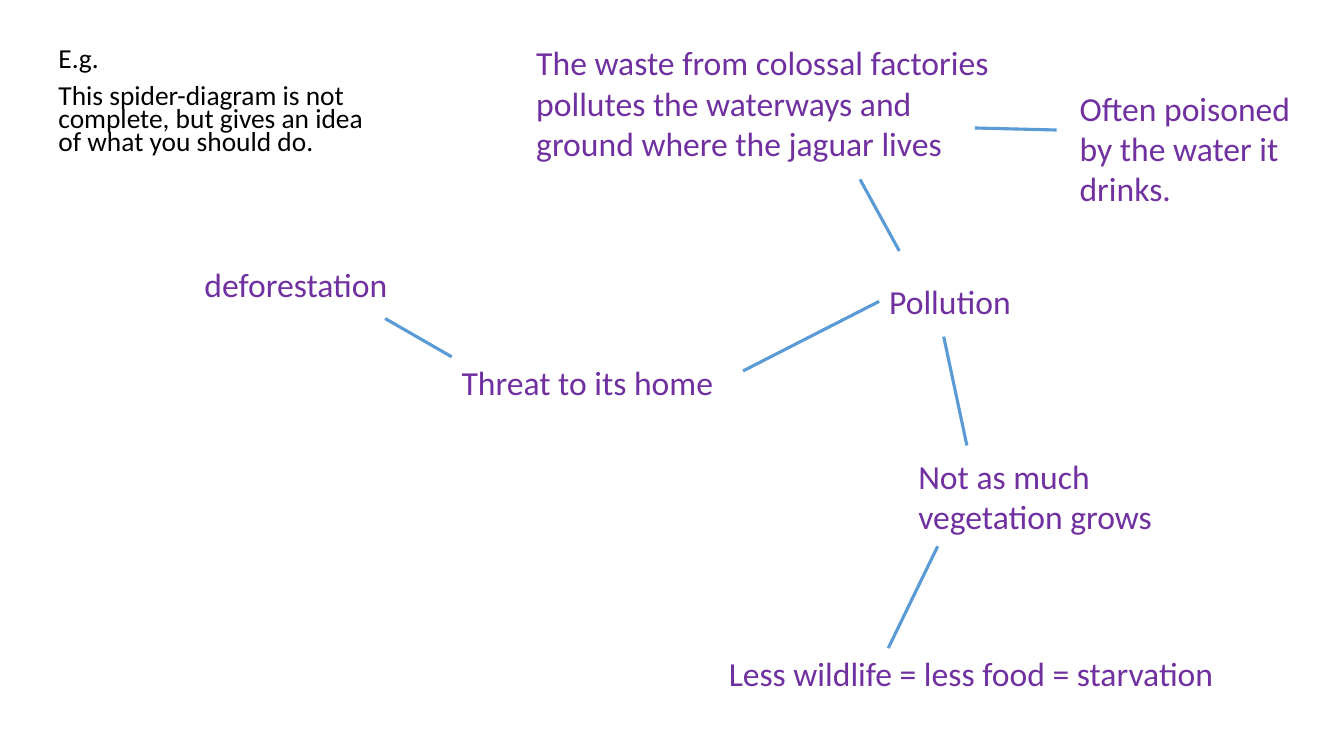
from lxml import etree
from pptx import Presentation
from pptx.dml.color import RGBColor
from pptx.enum.shapes import MSO_CONNECTOR
from pptx.enum.text import MSO_ANCHOR, MSO_AUTO_SIZE
from pptx.oxml.ns import qn
from pptx.util import Inches, Pt

STRAIGHT = MSO_CONNECTOR.STRAIGHT
TOP = MSO_ANCHOR.TOP
NO_FIT = MSO_AUTO_SIZE.NONE
GROW = MSO_AUTO_SIZE.SHAPE_TO_FIT_TEXT

COLORS = {"note": "000000", "idea": "7030A0", "link": "5B9BD5"}
FONT = "Calibri"

NOTE_BOX = (0.48, 0.45, 3.34, 1.46)
NOTE = [
    "E.g.",
    "This spider-diagram is not complete, but gives an idea of what you should do.",
]
IDEAS = [
    ("Threat to its home", (4.48, 3.54, 3.13, 0.5)),
    ("Pollution", (8.72, 2.74, 1.58, 0.5)),
    ("deforestation", (1.93, 2.57, 2.2, 0.5)),
    ("The waste from colossal factories pollutes the waterways and ground "
     "where the jaguar lives", (5.22, 0.37, 4.78, 1.31)),
    ("Not as much vegetation grows", (9.01, 4.47, 2.6, 0.91)),
    ("Often poisoned by the water it drinks.", (10.61, 0.82, 2.6, 1.31)),
    ("Less wildlife = less food = starvation", (7.13, 6.43, 5.33, 0.5)),
]
LINKS = [
    (8.53, 1.78, 8.92, 2.49),
    (4.48, 3.54, 3.82, 3.16),
    (9.59, 4.42, 9.36, 3.34),
    (7.37, 3.68, 8.72, 2.99),
    (9.67, 1.27, 10.48, 1.29),
    (8.81, 6.43, 9.3, 5.42),
]


def write(frame, lines, *, size, color, fit, line_spacing=None, space_before=None):
    frame.word_wrap = True
    frame.auto_size = fit
    frame.vertical_anchor = TOP
    for number, line in enumerate(lines):
        paragraph = frame.paragraphs[0] if number == 0 else frame.add_paragraph()
        paragraph.line_spacing = line_spacing
        paragraph.space_before = space_before
        run = paragraph.add_run()
        run.text = line
        run.font.name = FONT
        run.font.size = Pt(size)
        run.font.color.rgb = RGBColor.from_string(COLORS[color])


def main():
    deck = Presentation()
    deck.slide_width, deck.slide_height = Inches(13.33), Inches(7.5)
    slide = deck.slides.add_slide(deck.slide_layouts[1])
    title = slide.shapes.title.element
    title.getparent().remove(title)

    note = slide.placeholders[1]
    note.left, note.top, note.width, note.height = map(Inches, NOTE_BOX)
    write(note.text_frame, NOTE, size=19.6, color="note", fit=NO_FIT,
          line_spacing=0.7, space_before=Pt(10))
    for paragraph in note.text_frame.paragraphs:
        properties = paragraph._p.get_or_add_pPr()
        properties.set("marL", "0")
        properties.set("indent", "0")
        etree.SubElement(properties, qn("a:buNone"))

    for idea, box in IDEAS:
        branch = slide.shapes.add_textbox(*map(Inches, box))
        write(branch.text_frame, [idea], size=24, color="idea", fit=GROW)

    for ends in LINKS:
        link = slide.shapes.add_connector(STRAIGHT, *map(Inches, ends))
        link.line.color.rgb = RGBColor.from_string(COLORS["link"])
        link.line.width = Pt(2.25)
        etree.SubElement(link._element.spPr, qn("a:effectLst"))

    deck.save("out.pptx")


if __name__ == "__main__":
    main()
